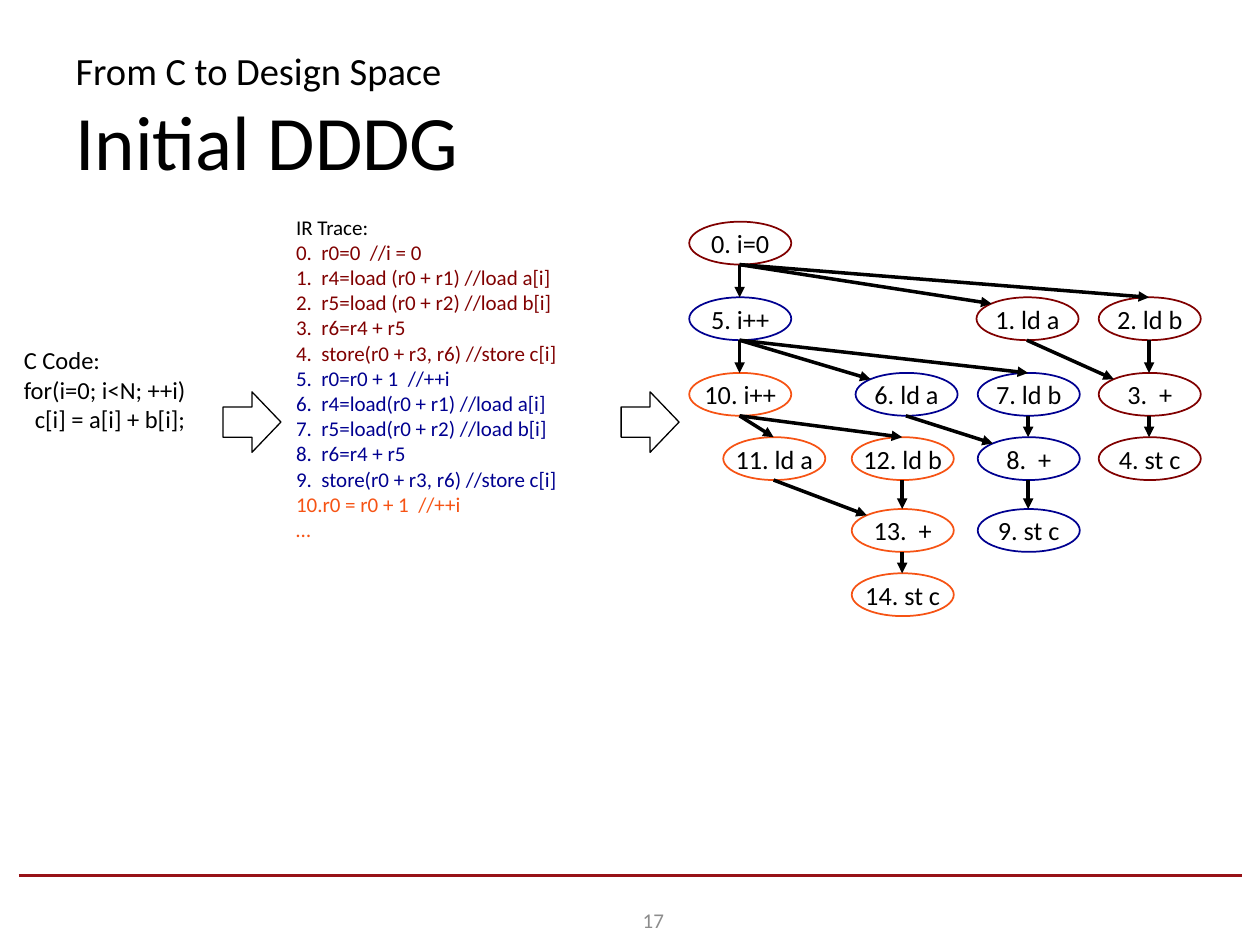
from dataclasses import dataclass
from typing import NamedTuple

from lxml import etree
from pptx import Presentation
from pptx import util as u
from pptx.dml.color import RGBColor
from pptx.enum import shapes, text
from pptx.oxml.ns import qn

PX = 9144


@dataclass(frozen=True)
class Theme:
    font: str = "Calibri"
    black: str = "000000"
    white: str = "FFFFFF"
    rule: str = "971217"
    muted: str = "8C8C8C"
    first: str = "800000"
    second: str = "000090"
    third: str = "F65314"
    title: int = 44
    subtitle: int = 22
    node: int = 15
    code: int = 14
    small: int = 12


class Box(NamedTuple):
    left: int
    top: int
    width: int
    height: int

    def emu(self) -> list[int]:
        return [length * PX for length in self]


class Node(NamedTuple):
    label: str
    left: int
    top: int
    color: str

    def box(self) -> Box:
        return Box(self.left, self.top, 81, 34)

    def top_center(self) -> tuple[int, int]:
        return self.left + 40, self.top

    def bottom_center(self) -> tuple[int, int]:
        return self.left + 40, self.top + 34

    def upper_left(self) -> tuple[int, int]:
        return self.left + 12, self.top + 5


class Edge(NamedTuple):
    source: int
    target: int
    to_corner: bool = False


class Line(NamedTuple):
    text: str
    color: str


THEME = Theme()

NODES = [
    Node("0. i=0", 547, 176, THEME.first),
    Node("1. ld a", 775, 236, THEME.first),
    Node("2. ld b", 872, 236, THEME.first),
    Node("3.  +", 872, 296, THEME.first),
    Node("4. st c", 872, 347, THEME.first),
    Node("5. i++", 547, 236, THEME.second),
    Node("6. ld a", 679, 296, THEME.second),
    Node("7. ld b", 776, 296, THEME.second),
    Node("8.  +", 776, 347, THEME.second),
    Node("9. st c", 776, 404, THEME.second),
    Node("10. i++", 547, 296, THEME.third),
    Node("11. ld a", 574, 347, THEME.third),
    Node("12. ld b", 676, 347, THEME.third),
    Node("13.  +", 676, 404, THEME.third),
    Node("14. st c", 676, 455, THEME.third),
]

EDGES = [
    Edge(0, 1, True), Edge(0, 2), Edge(1, 3, True), Edge(2, 3), Edge(3, 4),
    Edge(0, 5), Edge(5, 6, True), Edge(5, 7), Edge(7, 8), Edge(6, 8, True), Edge(8, 9),
    Edge(5, 10), Edge(10, 11), Edge(10, 12), Edge(11, 13, True), Edge(12, 13), Edge(13, 14),
]

C_CODE = ["C Code:", "for(i=0; i<N; ++i)", "  c[i] = a[i] + b[i];"]

IR_TRACE = {
    THEME.black: ["IR Trace:"],
    THEME.first: [
        "0.  r0=0  //i = 0",
        "1.  r4=load (r0 + r1) //load a[i]",
        "2.  r5=load (r0 + r2) //load b[i]",
        "3.  r6=r4 + r5",
        "4.  store(r0 + r3, r6) //store c[i]",
    ],
    THEME.second: [
        "5.  r0=r0 + 1  //++i",
        "6.  r4=load(r0 + r1) //load a[i]",
        "7.  r5=load(r0 + r2) //load b[i]",
        "8.  r6=r4 + r5",
        "9.  store(r0 + r3, r6) //store c[i]",
    ],
    THEME.third: ["10.r0 = r0 + 1  //++i", "…"],
}


def add_run(paragraph, content: str, *, size: int, color: str = THEME.black, align=text.PP_ALIGN.LEFT) -> None:
    paragraph.alignment = align
    run = paragraph.add_run()
    run.text = content
    run.font.name = THEME.font
    run.font.size = u.Pt(size)
    run.font.color.rgb = RGBColor.from_string(color)


def clear_margins(frame) -> None:
    frame.margin_left = frame.margin_top = frame.margin_right = frame.margin_bottom = 0


def add_text_box(slide, box: Box, lines: list[Line], size: int, align=text.PP_ALIGN.LEFT):
    frame = slide.shapes.add_textbox(*box.emu()).text_frame
    frame.word_wrap = True
    for index, line in enumerate(lines):
        paragraph = frame.add_paragraph() if index else frame.paragraphs[0]
        add_run(paragraph, line.text, size=size, color=line.color, align=align)
    return frame


def add_outlined(slide, kind, box: Box, color: str, width: float):
    shape = slide.shapes.add_shape(kind, *box.emu())
    shape.shadow.inherit = False
    shape.fill.solid()
    shape.fill.fore_color.rgb = RGBColor.from_string(THEME.white)
    shape.line.color.rgb = RGBColor.from_string(color)
    shape.line.width = u.Pt(width)
    return shape


def add_node(slide, node: Node) -> None:
    frame = add_outlined(slide, shapes.MSO_SHAPE.OVAL, node.box(), node.color, 1).text_frame
    clear_margins(frame)
    frame.word_wrap = False
    frame.vertical_anchor = text.MSO_ANCHOR.MIDDLE
    add_run(frame.paragraphs[0], node.label, size=THEME.node, align=text.PP_ALIGN.CENTER)


def add_line(slide, start: tuple[int, int], end: tuple[int, int], color: str, arrow: bool = False) -> None:
    points = [length * PX for length in (*start, *end)]
    connector = slide.shapes.add_connector(shapes.MSO_CONNECTOR.STRAIGHT, *points)
    connector.line.color.rgb = RGBColor.from_string(color)
    connector.line.width = u.Pt(2)
    if arrow:
        etree.SubElement(connector.line._get_or_add_ln(), qn("a:tailEnd"), type="triangle")
    etree.SubElement(connector._element.spPr, qn("a:effectLst"))


def fill_title(title) -> None:
    title.left, title.top, title.width, title.height = Box(50, 30, 900, 125).emu()
    frame = title.text_frame
    frame.auto_size = text.MSO_AUTO_SIZE.NONE
    frame.vertical_anchor = text.MSO_ANCHOR.MIDDLE
    paragraph = frame.paragraphs[0]
    add_run(paragraph, "From C to Design Space", size=THEME.subtitle)
    paragraph.add_line_break()
    etree.SubElement(paragraph._p[-1], qn("a:rPr"), sz=str(THEME.subtitle * 100))
    add_run(paragraph, "Initial DDDG", size=THEME.title)


def main() -> None:
    presentation = Presentation()
    presentation.slide_width, presentation.slide_height = 1000 * PX, 750 * PX
    slide = presentation.slides.add_slide(presentation.slide_layouts[5])
    add_line(slide, (15, 695), (986, 695), THEME.rule)
    fill_title(slide.shapes.title)
    for left in (177, 493):
        add_outlined(slide, shapes.MSO_SHAPE.RIGHT_ARROW, Box(left, 311, 46, 48), THEME.black, 0.75)
    for node in NODES:
        add_node(slide, node)
    for edge in EDGES:
        target = NODES[edge.target]
        end = target.upper_left() if edge.to_corner else target.top_center()
        add_line(slide, NODES[edge.source].bottom_center(), end, THEME.black, arrow=True)
    code = [Line(content, THEME.black) for content in C_CODE]
    add_text_box(slide, Box(9, 269, 181, 81), code, THEME.code)
    trace = [Line(content, color) for color, group in IR_TRACE.items() for content in group]
    clear_margins(add_text_box(slide, Box(235, 170, 247, 263), trace, THEME.small))
    number = [Line("17", THEME.muted)]
    footer = add_text_box(slide, Box(402, 710, 233, 40), number, THEME.small, text.PP_ALIGN.CENTER)
    footer.vertical_anchor = text.MSO_ANCHOR.MIDDLE
    presentation.save("out.pptx")


if __name__ == "__main__":
    main()
